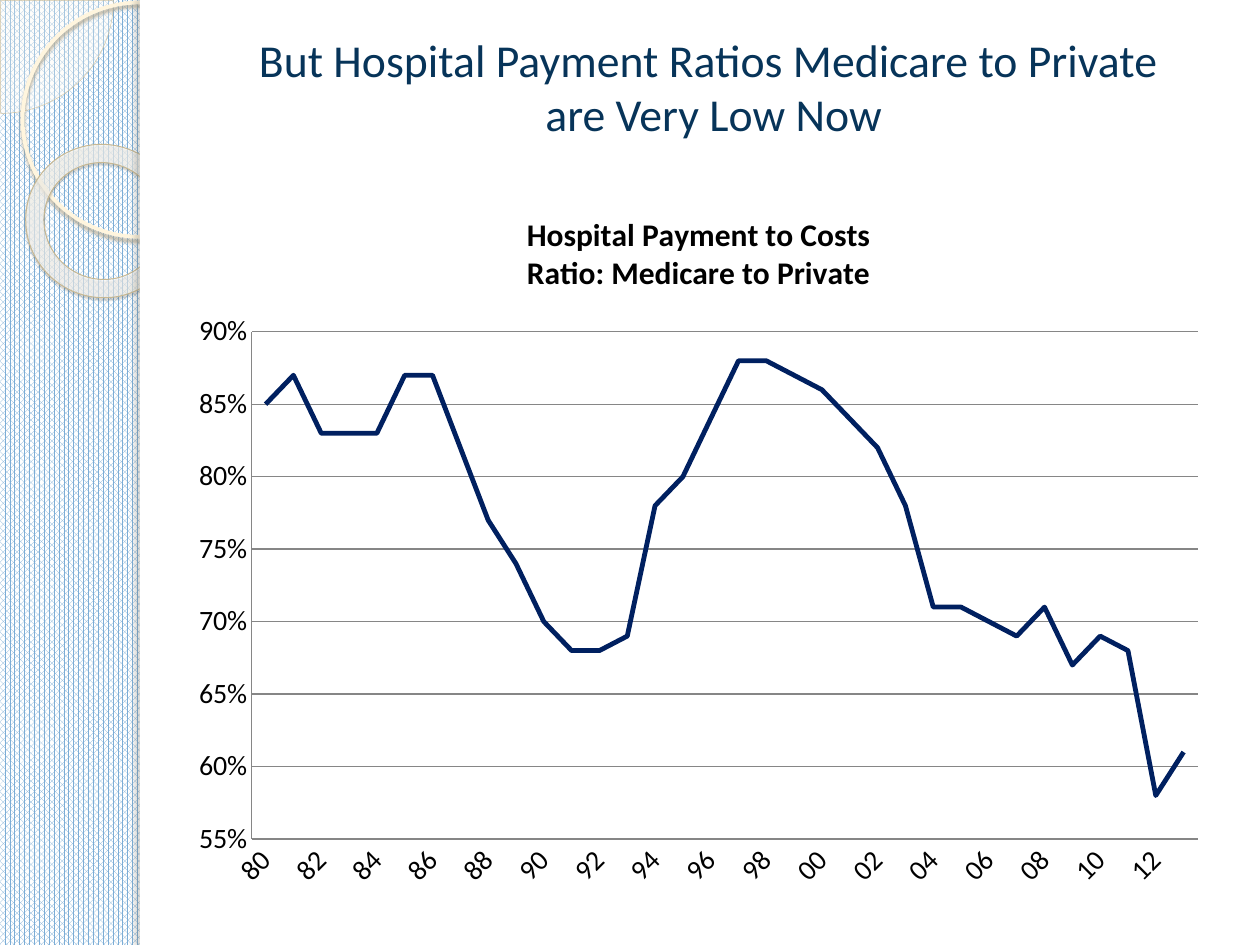
from pptx import Presentation
from pptx.chart.data import CategoryChartData
from pptx.dml.color import RGBColor
from pptx.enum.chart import XL_CHART_TYPE, XL_TICK_MARK
from pptx.enum.dml import MSO_PATTERN
from pptx.enum.shapes import MSO_SHAPE
from pptx.enum.text import MSO_ANCHOR, PP_ALIGN
from pptx.oxml import parse_xml
from pptx.oxml.ns import nsdecls
from pptx.util import Inches, Pt


def rgb(hex_code):
    return RGBColor.from_string(hex_code)


def color_xml(hex_code, alpha):
    return f'<a:srgbClr val="{hex_code}"><a:alpha val="{alpha * 1000}"/></a:srgbClr>'


def write(frame, text, size, color="000000", bold=False, align=PP_ALIGN.CENTER):
    frame.text = text
    for paragraph in frame.paragraphs:
        paragraph.alignment = align
        for run in paragraph.runs:
            set_font(run.font, size, color, bold)


def set_font(font, size, color="000000", bold=False):
    font.name = "Calibri"
    font.size = Pt(size)
    font.bold = bold
    font.color.rgb = rgb(color)


class SlideBuilder:
    grid_color = "868686"
    series_color = "002060"

    def __init__(self, slide):
        self.slide = slide

    def background(self, fore, back):
        fill = self.slide.background.fill
        fill.patterned()
        fill.pattern = MSO_PATTERN.PERCENT_75
        fill.fore_color.rgb = rgb(fore)
        fill.back_color.rgb = rgb(back)

    def shape(self, preset, box, fill=None, line=None, shadow=None, adjust=(), rotation=0):
        shape = self.slide.shapes.add_shape(preset, *map(Inches, box))
        shape.rotation = rotation
        for index, value in enumerate(adjust):
            shape.adjustments[index] = value
        if fill:
            shape.fill.solid()
            shape.fill.fore_color.rgb = rgb(fill)
        else:
            shape.fill.background()
        if line:
            color, width = line
            shape.line.color.rgb = rgb(color)
            shape.line.width = Pt(width)
        else:
            shape.line.fill.background()
        shape.shadow.inherit = False
        if shadow:
            self.cast_shadow(shape, *shadow)
        return shape

    def cast_shadow(self, shape, color, alpha, blur, distance, angle):
        effects = shape.element.spPr.xpath("a:effectLst")[0]
        effects.append(parse_xml(
            f'<a:outerShdw {nsdecls("a")} blurRad="{Pt(blur)}" dist="{Pt(distance)}" '
            f'dir="{angle * 60000}" algn="tl" rotWithShape="0">'
            f'{color_xml(color, alpha)}</a:outerShdw>'))

    def fade(self, shape, color, alpha):
        self.replace_fill(shape, f'<a:solidFill {nsdecls("a")}>{color_xml(color, alpha)}</a:solidFill>')

    def radial_gradient(self, shape, stops, focus):
        stop_list = "".join(
            f'<a:gs pos="{position * 1000}">{color_xml(color, alpha)}</a:gs>'
            for position, color, alpha in stops)
        edges = " ".join(f'{side}="{value * 1000}"' for side, value in zip("ltrb", focus))
        self.replace_fill(shape, (
            f'<a:gradFill {nsdecls("a")} rotWithShape="1"><a:gsLst>{stop_list}</a:gsLst>'
            f'<a:path path="circle"><a:fillToRect {edges}/></a:path></a:gradFill>'))

    def replace_fill(self, shape, xml):
        properties = shape.element.spPr
        old_fill = properties.xpath("a:solidFill | a:noFill")[0]
        properties.replace(old_fill, parse_xml(xml))

    def title(self, box, text):
        frame = self.slide.shapes.add_textbox(*map(Inches, box)).text_frame
        frame.word_wrap = True
        frame.vertical_anchor = MSO_ANCHOR.MIDDLE
        write(frame, text, 26.1, color="073459")

    def line_chart(self, box, heading, categories, values):
        data = CategoryChartData(number_format="0%")
        data.categories = categories
        data.add_series("Series 1", values)
        chart = self.slide.shapes.add_chart(
            XL_CHART_TYPE.LINE, *map(Inches, box), data).chart
        set_font(chart.font, 10)
        chart.has_legend = False
        chart.has_title = True
        write(chart.chart_title.text_frame, heading, 18, bold=True)

        chart.plots[0].vary_by_categories = False
        series = chart.plots[0].series[0]
        series.smooth = False
        series.format.line.color.rgb = rgb(self.series_color)
        series.format.line.width = Pt(2.75)

        ratio_axis = chart.value_axis
        ratio_axis.minimum_scale = 0.55
        ratio_axis.maximum_scale = 0.9
        ratio_axis.major_unit = 0.05
        ratio_axis.has_major_gridlines = True
        ratio_axis.major_gridlines.format.line.color.rgb = rgb(self.grid_color)
        ratio_axis.tick_labels.number_format = "0%"
        ratio_axis.tick_labels.number_format_is_linked = False
        for axis in (chart.category_axis, ratio_axis):
            axis.major_tick_mark = axis.minor_tick_mark = XL_TICK_MARK.NONE
            axis.format.line.color.rgb = rgb(self.grid_color)
            set_font(axis.tick_labels.font, 16)
        self.slant_labels(chart)
        self.place_plot(chart, x=0.07, y=0.2, w=0.91, h=0.71)

    def slant_labels(self, chart):
        year_axis = chart.element.xpath(".//c:catAx")[0]
        year_axis.xpath("c:txPr/a:bodyPr")[0].set("rot", "-2700000")
        skip = parse_xml(f'<c:tickLblSkip {nsdecls("c")} val="2"/>')
        year_axis.xpath("c:noMultiLvlLbl")[0].addprevious(skip)

    def place_plot(self, chart, **bounds):
        plot_area = chart.element.xpath(".//c:plotArea")[0]
        for layout in plot_area.xpath("c:layout"):
            plot_area.remove(layout)
        sizes = "".join(f'<c:{name} val="{value}"/>' for name, value in bounds.items())
        plot_area.insert(0, parse_xml(
            f'<c:layout {nsdecls("c")}><c:manualLayout><c:layoutTarget val="inner"/>'
            f'<c:xMode val="edge"/><c:yMode val="edge"/>{sizes}</c:manualLayout></c:layout>'))


def main():
    deck = Presentation()
    deck.slide_width, deck.slide_height = Inches(10), Inches(7.5)
    builder = SlideBuilder(deck.slides.add_slide(deck.slide_layouts[6]))
    builder.background("7CADD6", "FFFFFF")

    corner = builder.shape(MSO_SHAPE.PIE, (-0.89, -0.89, 1.79, 1.79), fill="FEFAF4",
                           line=("D3C39F", 0.25), adjust=(0, 54.02))
    builder.fade(corner, "FEFAF4", 33)
    builder.shape(MSO_SHAPE.OVAL, (0.18, 0.02, 1.86, 1.86), line=("FFF5DE", 2.15),
                  shadow=("B0A68F", 85, 2, 2, 90))
    ring = builder.shape(MSO_SHAPE.DONUT, (0.2, 1.15, 1.23, 1.21), line=("C7B893", 0.58),
                         shadow=("5A5444", 35, 1, 1.2, 75), adjust=(0.12,), rotation=38.6)
    builder.radial_gradient(
        ring, [(0, "FFFCF6", 70), (70, "FFFEFB", 55), (100, "F0D28E", 60)],
        focus=(-408, -50, 508, 150))
    builder.shape(MSO_SHAPE.RECTANGLE, (1.11, 0, 8.89, 7.5), fill="FFFFFF")
    builder.shape(MSO_SHAPE.RECTANGLE, (1.11, 0, 0.08, 7.5), fill="FFFFFF",
                  shadow=("736F63", 25, 3, 3, 180))

    builder.title((1.33, 0.25, 8.67, 0.87),
                  "But Hospital Payment Ratios Medicare to Private \vare Very Low Now")
    years = [f"{year % 100:02d}" for year in range(1980, 2014)]
    ratios = [
        0.85, 0.87, 0.83, 0.83, 0.83, 0.87, 0.87, 0.82, 0.77, 0.74, 0.7, 0.68,
        0.68, 0.69, 0.78, 0.8, 0.84, 0.88, 0.88, 0.87, 0.86, 0.84, 0.82, 0.78,
        0.71, 0.71, 0.7, 0.69, 0.71, 0.67, 0.69, 0.68, 0.58, 0.61,
    ]
    builder.line_chart((1.42, 1.5, 8.25, 5.67),
                       "Hospital Payment to Costs\nRatio: Medicare to Private", years, ratios)
    deck.save("out.pptx")


if __name__ == "__main__":
    main()
